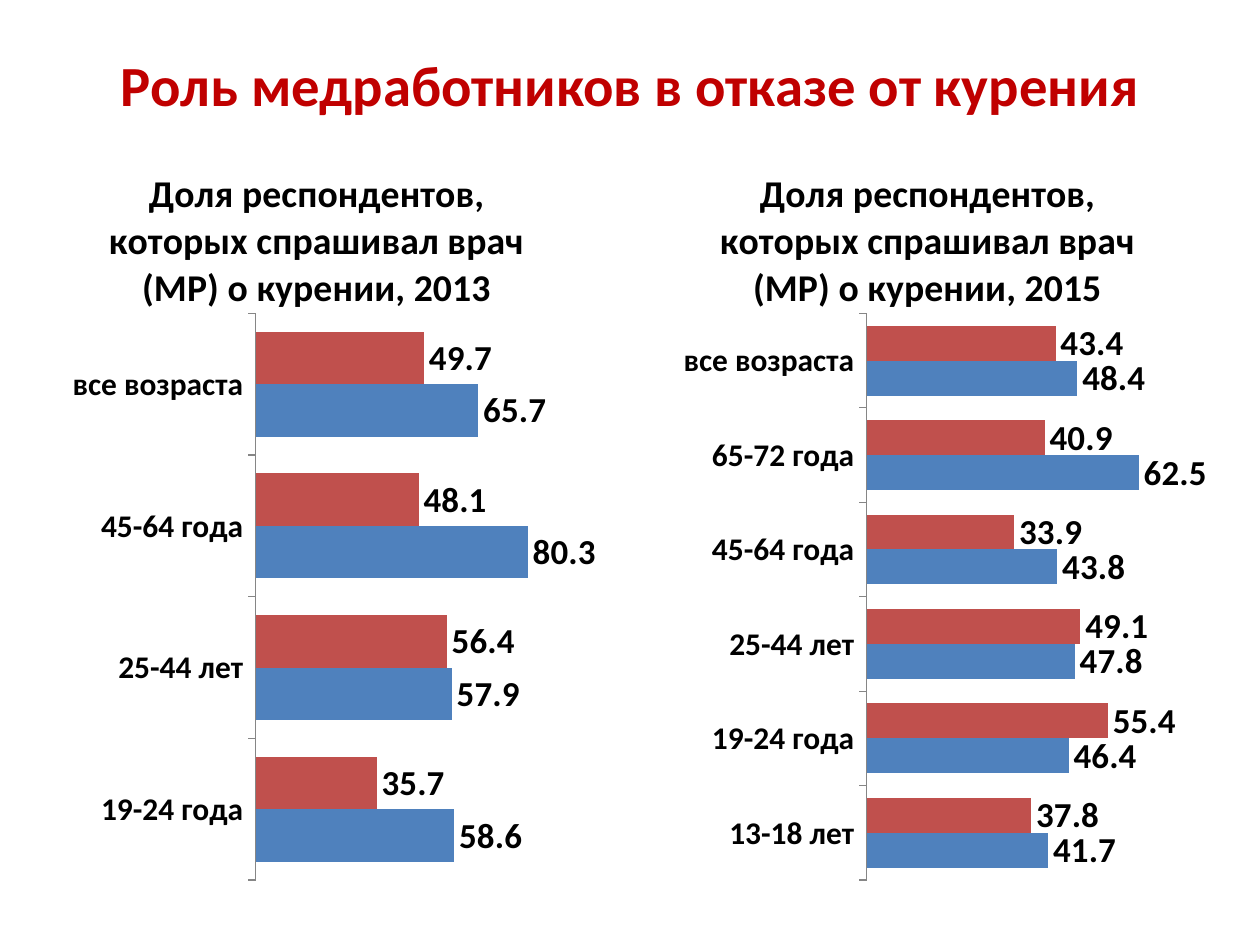
import pptx
import pptx.chart.data
import pptx.dml.color
import pptx.enum.chart
import pptx.enum.text
import pptx.util
from lxml import etree

COLORS = {"title": "C00000", "text": "000000", "axis": "868686",
          "lower": "4F81BD", "upper": "C0504D"}
CHART_NS = "http://schemas.openxmlformats.org/drawingml/2006/chart"
PLOT_LAYOUT = {"layoutTarget": "inner", "xMode": "edge", "yMode": "edge",
               "x": 0.39, "y": 0.23, "w": 0.549, "h": 0.739}


class SlideBuilder:
    font_name = "Calibri"
    emu_per_px = 914400 / 126

    def __init__(self, page):
        self.page = page

    def box(self, *lengths):
        return [pptx.util.Emu(round(length * self.emu_per_px)) for length in lengths]

    def color(self, name):
        return pptx.dml.color.RGBColor.from_string(COLORS[name])

    def style_font(self, font, size, color="text"):
        font.name = self.font_name
        font.size = pptx.util.Pt(size)
        font.bold = True
        font.color.rgb = self.color(color)

    def title(self, text, left, top, width, height):
        title = self.page.shapes.title
        title.left, title.top, title.width, title.height = self.box(left, top, width, height)
        frame = title.text_frame
        frame.word_wrap = True
        frame.vertical_anchor = pptx.enum.text.MSO_ANCHOR.MIDDLE
        para = frame.paragraphs[0]
        para.alignment = pptx.enum.text.PP_ALIGN.CENTER
        span = para.add_run()
        span.text = text
        self.style_font(span.font, 32.4, "title")

    def place_plot(self, chart):
        plot_area = chart.plots[0]._element.getparent()
        for old in plot_area.findall(f"{{{CHART_NS}}}layout"):
            plot_area.remove(old)
        layout = etree.Element(f"{{{CHART_NS}}}layout")
        manual = etree.SubElement(layout, f"{{{CHART_NS}}}manualLayout")
        for name, value in PLOT_LAYOUT.items():
            etree.SubElement(manual, f"{{{CHART_NS}}}{name}").set("val", str(value))
        plot_area.insert(0, layout)

    def bar_chart(self, title, rows, maximum, left, top, width, height):
        data = pptx.chart.data.CategoryChartData(number_format="0.0")
        categories, lower, upper = zip(*rows)
        data.categories = categories
        data.add_series("Series 1", lower)
        data.add_series("Series 2", upper)
        chart = self.page.shapes.add_chart(
            pptx.enum.chart.XL_CHART_TYPE.BAR_CLUSTERED,
            *self.box(left, top, width, height), data).chart
        self.style_font(chart.font, 18)
        chart.has_legend = False
        chart.has_title = True
        span = chart.chart_title.text_frame.paragraphs[0].add_run()
        span.text = title
        self.style_font(span.font, 21.6)
        chart.chart_title.include_in_layout = False

        value_axis = chart.value_axis
        value_axis.minimum_scale = 0
        value_axis.maximum_scale = maximum
        value_axis.has_major_gridlines = False
        value_axis.visible = False
        category_axis = chart.category_axis
        category_axis.major_tick_mark = pptx.enum.chart.XL_TICK_MARK.OUTSIDE
        category_axis.format.line.color.rgb = self.color("axis")
        category_axis.format.line.width = pptx.util.Pt(0.75)

        plot = chart.plots[0]
        plot.gap_width = 70
        plot.overlap = 0
        plot.vary_by_categories = False
        for series, color in zip(plot.series, ("lower", "upper")):
            series.format.fill.solid()
            series.format.fill.fore_color.rgb = self.color(color)
            labels = series.data_labels
            labels.show_value = True
            labels.number_format = "0.0"
            labels.number_format_is_linked = False
            labels.position = pptx.enum.chart.XL_LABEL_POSITION.OUTSIDE_END
            self.style_font(labels.font, 20)
        self.place_plot(chart)


def main():
    deck = pptx.Presentation()
    deck.slide_width = pptx.util.Inches(10)
    deck.slide_height = pptx.util.Inches(7.5)
    builder = SlideBuilder(deck.slides.add_slide(deck.slide_layouts[5]))
    builder.title("Роль медработников в отказе от курения", 63, 38, 1134, 91)
    surveys = [
        (2013, 39, 90, [("19-24 года", 58.6, 35.7), ("25-44 лет", 57.9, 56.4),
                        ("45-64 года", 80.3, 48.1), ("все возраста", 65.7, 49.7)]),
        (2015, 650, 70, [("13-18 лет", 41.7, 37.8), ("19-24 года", 46.4, 55.4),
                         ("25-44 лет", 47.8, 49.1), ("45-64 года", 43.8, 33.9),
                         ("65-72 года", 62.5, 40.9), ("все возраста", 48.4, 43.4)]),
    ]
    for year, left, maximum, rows in surveys:
        builder.bar_chart(
            f"Доля респондентов, которых спрашивал врач (МР) о курении, {year}",
            rows, maximum, left, 137, 557, 767)
    deck.save("out.pptx")


if __name__ == "__main__":
    main()
